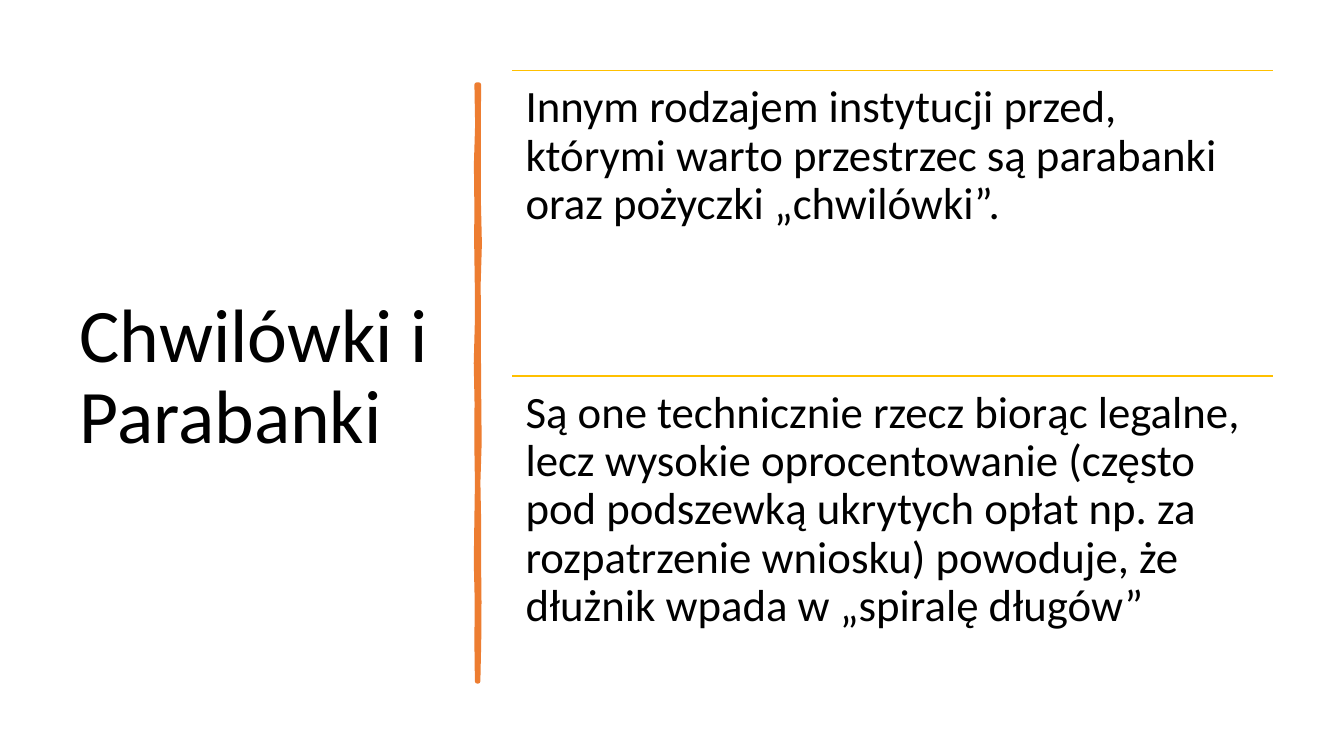
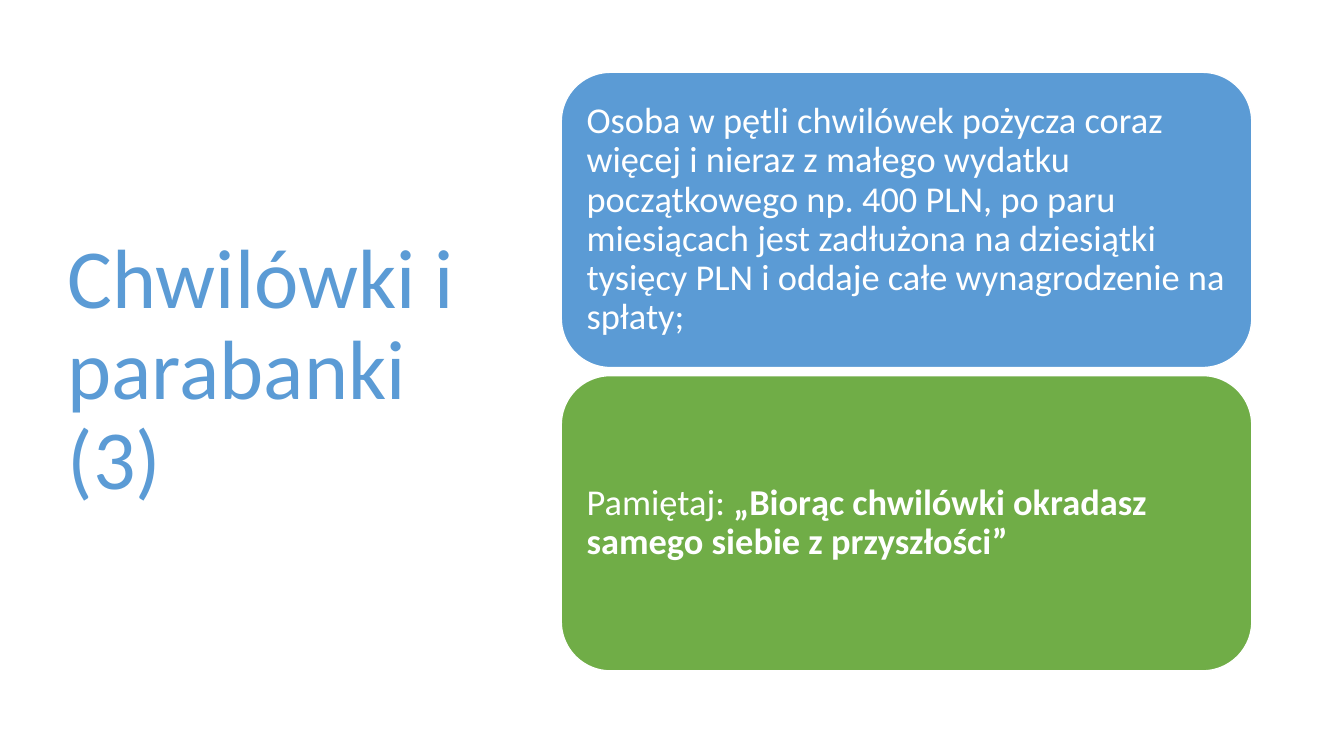
from dataclasses import dataclass
from math import sin

from lxml.etree import SubElement
from pptx import Presentation
from pptx.dml.color import RGBColor
from pptx.enum.shapes import MSO_CONNECTOR, MSO_SHAPE
from pptx.enum.text import MSO_ANCHOR, MSO_AUTO_SIZE, PP_ALIGN
from pptx.oxml.ns import qn
from pptx.util import Inches, Pt


@dataclass(frozen=True)
class Theme:
    font: str = "Calibri"
    black: str = "000000"
    white: str = "FFFFFF"
    blue: str = "5B9BD5"
    green: str = "70AD47"
    orange: str = "ED7D31"
    gold: str = "FFC000"
    heading_size: int = 54
    large_heading_size: int = 60
    statement_size: int = 32
    card_size: int = 26
    hairline: float = 1
    brush_line: float = 3.25
    line_spacing: float = 0.9
    inset_share: float = 0.3


THEME = Theme()


def rgb(color):
    return RGBColor.from_string(color)


def write_text(frame, *pieces, size, color, bold=(), anchor=MSO_ANCHOR.TOP, inset=None):
    frame.word_wrap = True
    frame.auto_size = MSO_AUTO_SIZE.NONE
    frame.vertical_anchor = anchor
    if inset is not None:
        frame.margin_left = frame.margin_right = Pt(inset)
        frame.margin_top = frame.margin_bottom = Pt(inset)
    paragraph = frame.paragraphs[0]
    paragraph.alignment = PP_ALIGN.LEFT
    paragraph.line_spacing = THEME.line_spacing
    for position, piece in enumerate(pieces):
        run = paragraph.add_run()
        run.text = piece
        run.font.name = THEME.font
        run.font.size = Pt(size)
        run.font.bold = position in bold
        run.font.color.rgb = rgb(color)


class Deck:
    def __init__(self, theme):
        self.theme = theme
        self.presentation = Presentation()
        self.presentation.slide_width = Inches(40 / 3)
        self.presentation.slide_height = Inches(7.5)
        self.slide = None

    def across(self, percent):
        return round(self.presentation.slide_width * percent / 100)

    def down(self, percent):
        return round(self.presentation.slide_height * percent / 100)

    def area(self, left, top, width, height):
        return self.across(left), self.down(top), self.across(width), self.down(height)

    def start_slide(self, heading, area, size, color):
        self.slide = self.presentation.slides.add_slide(self.presentation.slide_layouts[5])
        title = self.slide.shapes.title
        title.left, title.top, title.width, title.height = self.area(*area)
        write_text(title.text_frame, heading, size=size, color=color, anchor=MSO_ANCHOR.MIDDLE)

    def brush_stroke(self, center, top, bottom, half_width=0.08, wobble=0.06, steps=15):
        def edge(side):
            for step in range(steps + 1):
                share = step / steps
                x = center + side * half_width + wobble * sin(38 * share + side) * sin(17 * share)
                yield self.across(x), self.down(top + (bottom - top) * share)

        outline = list(edge(-1)) + list(edge(1))[::-1]
        builder = self.slide.shapes.build_freeform(*outline[0], scale=1.0)
        builder.add_line_segments(outline[1:], close=True)
        stroke = builder.convert_to_shape()
        self.paint(stroke, self.theme.orange, self.theme.orange, self.theme.brush_line)

    def paint(self, shape, fill, line, width):
        shape.shadow.inherit = False
        shape.fill.solid()
        shape.fill.fore_color.rgb = rgb(fill)
        shape.line.color.rgb = rgb(line)
        shape.line.width = Pt(width)

    def rule(self, left, top, width):
        start, level, end = self.across(left), self.down(top), self.across(left + width)
        rule = self.slide.shapes.add_connector(MSO_CONNECTOR.STRAIGHT, start, level, end, level)
        rule.line.color.rgb = rgb(self.theme.gold)
        rule.line.width = Pt(self.theme.hairline)
        SubElement(rule._element.spPr, qn("a:effectLst"))

    def statements(self, texts, left, top, width, height):
        size = self.theme.statement_size
        for row, statement in enumerate(texts):
            row_top = top + row * height
            self.rule(left, row_top, width)
            box = self.slide.shapes.add_textbox(*self.area(left, row_top, width, height))
            write_text(box.text_frame, statement, size=size, color=self.theme.black,
                       inset=size * self.theme.inset_share)

    def cards(self, contents, left, top, width, height, gap):
        size = self.theme.card_size
        for row, (fill, pieces) in enumerate(contents):
            area = self.area(left, top + row * (height + gap), width, height)
            card = self.slide.shapes.add_shape(MSO_SHAPE.ROUNDED_RECTANGLE, *area)
            self.paint(card, fill, self.theme.white, self.theme.hairline)
            write_text(card.text_frame, *pieces, size=size, color=self.theme.white, bold=(1,),
                       anchor=MSO_ANCHOR.MIDDLE, inset=size * self.theme.inset_share)


def main():
    deck = Deck(THEME)

    deck.start_slide("Chwilówki i Parabanki", (5.18, 9.33, 28.05, 81.47),
                     THEME.heading_size, THEME.black)
    deck.brush_stroke(center=35.55, top=11.2, bottom=90.13)
    deck.statements([
        "Innym rodzajem instytucji przed, którymi warto przestrzec są parabanki "
        "oraz pożyczki „chwilówki”.",
        "Są one technicznie rzecz biorąc legalne, lecz wysokie oprocentowanie "
        "(często pod podszewką ukrytych opłat np. za rozpatrzenie wniosku) "
        "powoduje, że dłużnik wpada w „spiralę długów”",
    ], left=38.1, top=9.35, width=56.63, height=40.38)

    deck.start_slide("Chwilówki i parabanki (3)", (4.28, 9.05, 31.2, 80.27),
                     THEME.large_heading_size, THEME.blue)
    deck.cards([
        (THEME.blue, [
            "Osoba w pętli chwilówek pożycza coraz więcej i nieraz z małego wydatku "
            "początkowego np. 400 PLN, po paru miesiącach jest zadłużona na dziesiątki "
            "tysięcy PLN i oddaje całe wynagrodzenie na spłaty;",
        ]),
        (THEME.green, [
            "Pamiętaj: ",
            "„Biorąc chwilówki okradasz samego siebie z przyszłości”",
        ]),
    ], left=41.76, top=9.56, width=51.38, height=39.06, gap=1.06)

    deck.presentation.save("out.pptx")


if __name__ == "__main__":
    main()
